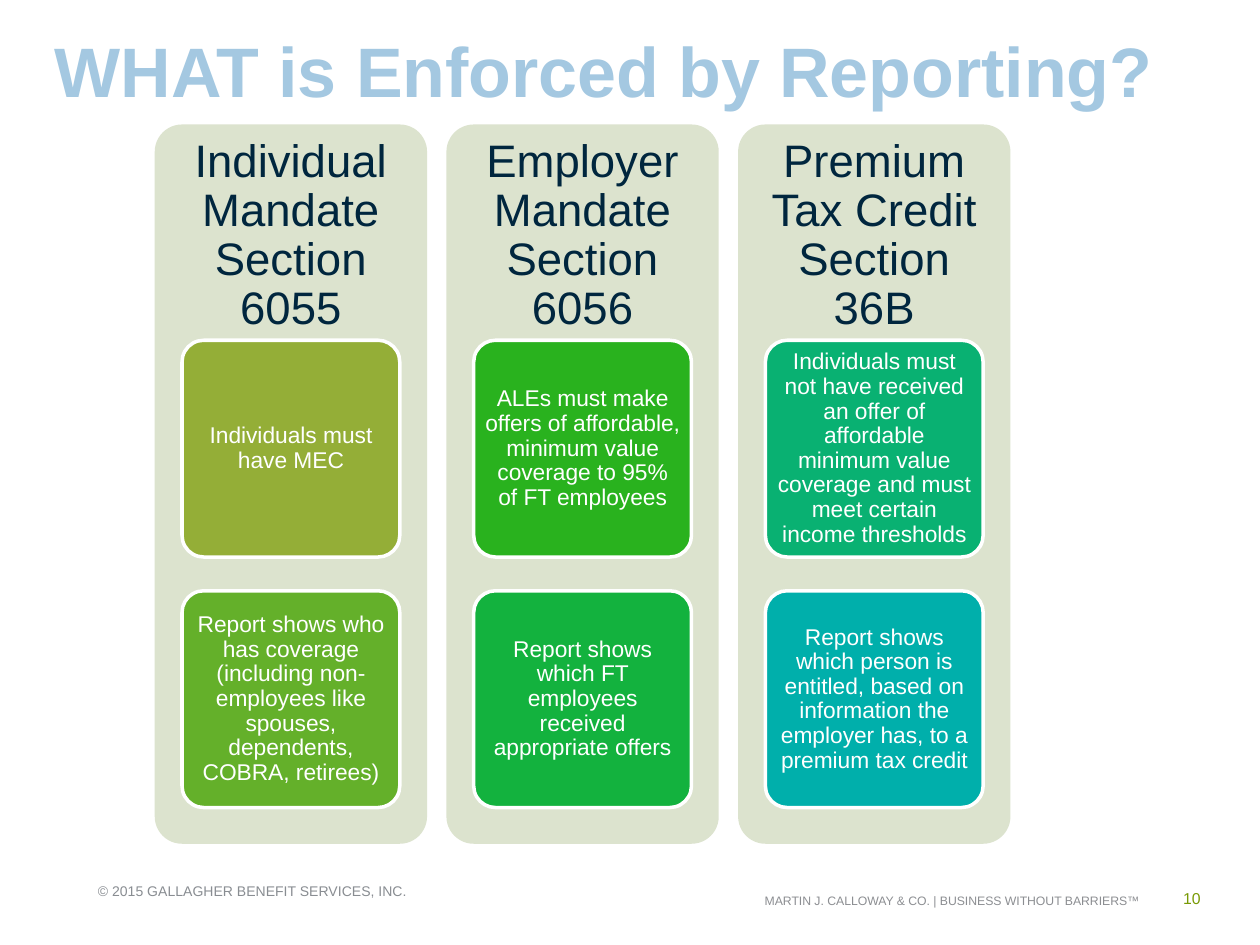
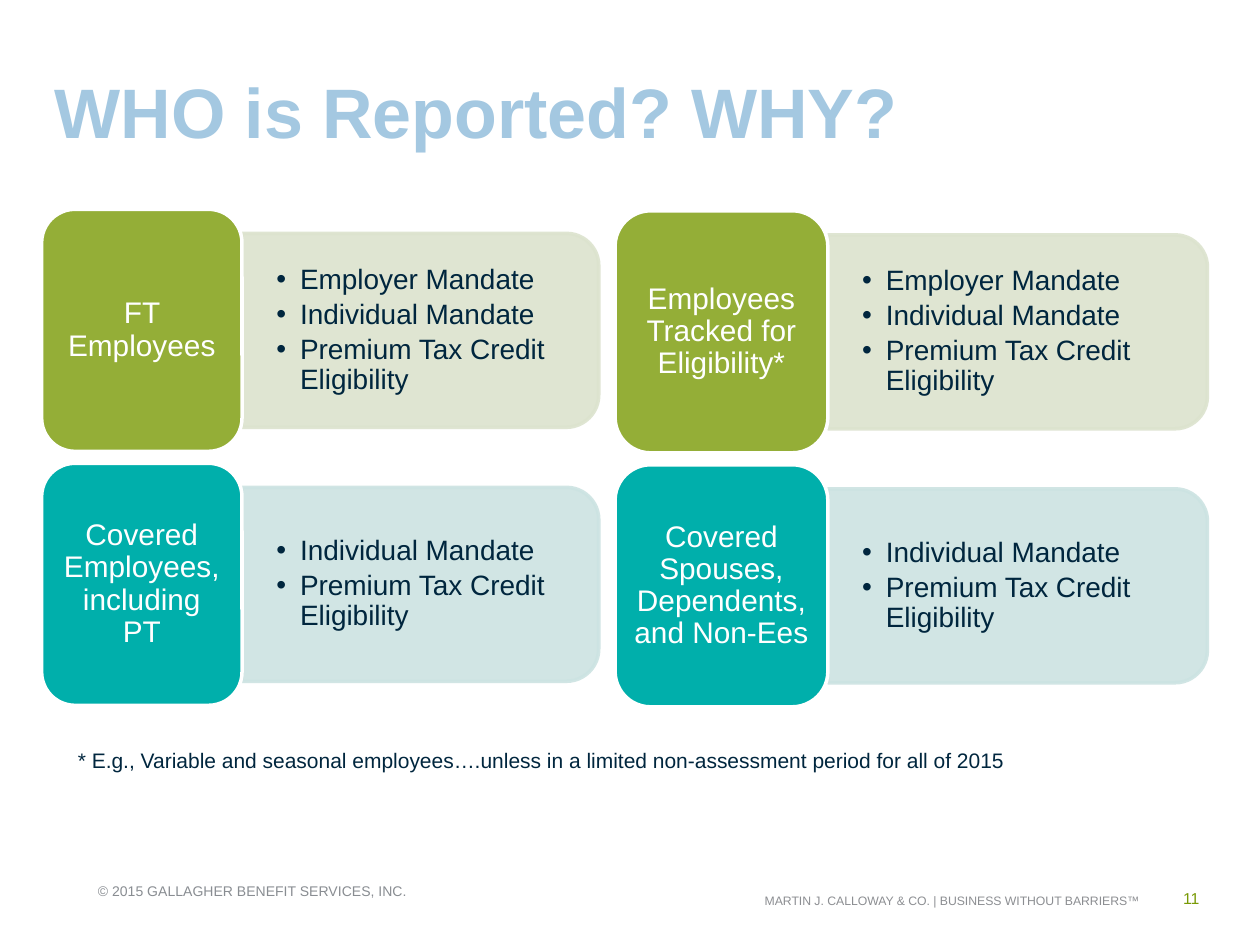
"""Build two slides on what health coverage reporting enforces and who is reported."""
from lxml.etree import SubElement
from pptx import Presentation
from pptx.dml.color import RGBColor
from pptx.enum.shapes import MSO_SHAPE
from pptx.enum.text import MSO_ANCHOR, MSO_AUTO_SIZE, PP_ALIGN
from pptx.oxml.ns import qn
from pptx.util import Cm, Pt

COLOURS = {
    "title": "A4C8E1", "navy": "00263E", "white": "FFFFFF",
    "tagline": "8C8E92", "copyright": "898D92", "number": "799A05",
    "sage": "DCE3CE", "mist": "CCE3E2", "olive": "94AE37", "teal": "00AFAB",
    "leaf": "64B02A", "green": "29B21E", "emerald": "13B23E", "jade": "09B172",
}
FONT = "Arial"


def write(holder, text, size, colour, bold=False, align=PP_ALIGN.LEFT,
          anchor=MSO_ANCHOR.MIDDLE, margins=(0.25, 0.13), spacing=None,
          after=0, bullet=False):
    frame = holder.text_frame
    frame.word_wrap = True
    frame.auto_size = MSO_AUTO_SIZE.NONE
    frame.vertical_anchor = anchor
    frame.margin_left = frame.margin_right = Cm(margins[0])
    frame.margin_top = frame.margin_bottom = Cm(margins[1])
    frame.text = text
    for paragraph in frame.paragraphs:
        paragraph.alignment = align
        paragraph.line_spacing = spacing
        paragraph.space_after = Pt(after)
        if bullet:
            properties = paragraph._p.get_or_add_pPr()
            properties.set("marL", str(Cm(0.48)))
            properties.set("indent", str(-Cm(0.48)))
            SubElement(properties, qn("a:buFont")).set("typeface", FONT)
            SubElement(properties, qn("a:buChar")).set("char", "•")
        for run in paragraph.runs:
            run.font.name = FONT
            run.font.size = Pt(size)
            run.font.bold = bold
            run.font.color.rgb = RGBColor.from_string(COLOURS[colour])


def draw(slide, preset, left, top, width, height, fill, line=None):
    shape = slide.shapes.add_shape(preset, Cm(left), Cm(top), Cm(width), Cm(height))
    shape.shadow.inherit = False
    shape.fill.solid()
    shape.fill.fore_color.rgb = RGBColor.from_string(COLOURS[fill])
    if line:
        shape.line.color.rgb = RGBColor.from_string(COLOURS[line])
        shape.line.width = Pt(2)
    else:
        shape.line.fill.background()
    return shape


deck = Presentation()
deck.slide_width, deck.slide_height = Cm(25.4), Cm(19.05)

slides = []
headlines = [("WHAT is Enforced by Reporting?", 0.43), ("WHO is Reported? WHY?", 1.25)]
for number, (headline, top) in enumerate(headlines, start=10):
    slide = deck.slides.add_slide(deck.slide_layouts[5])
    slides.append(slide)
    title = slide.shapes.title
    title.left, title.top, title.width, title.height = Cm(0.85), Cm(top), Cm(23.06), Cm(1.96)
    write(title, headline, 40, "title", bold=True, anchor=MSO_ANCHOR.TOP)
    footers = [
        ("MARTIN J. CALLOWAY & CO. | BUSINESS WITHOUT BARRIERS™",
         (12.78, 17.65, 10.44, 1.02), 7, "tagline", PP_ALIGN.RIGHT),
        ("© 2015 GALLAGHER BENEFIT SERVICES, INC.",
         (0.64, 17.45, 7.82, 1.02), 8, "copyright", PP_ALIGN.RIGHT),
        (str(number), (23.6, 17.78, 1.19, 0.64), 9, "number", PP_ALIGN.LEFT),
    ]
    for text, place, size, colour, align in footers:
        footer = slide.shapes.add_textbox(*map(Cm, place))
        write(footer, text, size, colour, align=align)

enforcement, reported = slides

mandates = [
    ("Individual Mandate Section 6055", [
        ("Individuals must have MEC", "olive"),
        ("Report shows who has coverage (including non-employees like spouses, "
         "dependents, COBRA, retirees)", "leaf")]),
    ("Employer Mandate Section 6056", [
        ("ALEs must make offers of affordable, minimum value coverage to 95% of "
         "FT employees", "green"),
        ("Report shows which FT employees received appropriate offers", "emerald")]),
    ("Premium Tax Credit Section 36B", [
        ("Individuals must not have received an offer of affordable minimum value "
         "coverage and must meet certain income thresholds", "jade"),
        ("Report shows which person is entitled, based on information the employer "
         "has, to a premium tax credit", "teal")]),
]
for column, (mandate, rules) in enumerate(mandates):
    left = 3.12 + column * 5.88
    panel = draw(enforcement, MSO_SHAPE.ROUNDED_RECTANGLE, left, 2.51, 5.49, 14.5, "sage")
    panel.adjustments[0] = 0.1
    write(panel, mandate, 26, "navy", align=PP_ALIGN.CENTER, anchor=MSO_ANCHOR.TOP,
          margins=(0.12, 0.12), spacing=0.9)
    for row, (rule, fill) in enumerate(rules):
        card = draw(enforcement, MSO_SHAPE.ROUNDED_RECTANGLE, left + 0.55,
                    6.86 + row * 5.05, 4.39, 4.37, fill, "white")
        card.adjustments[0] = 0.1
        write(card, rule, 13, "white", align=PP_ALIGN.CENTER,
              margins=(0.1, 0.08), spacing=0.9)

row_colours = [("olive", "sage"), ("teal", "mist")]
individual_reasons = ["Individual Mandate", "Premium Tax Credit Eligibility"]
row_reasons = [["Employer Mandate"] + individual_reasons, individual_reasons]
group_height, reason_height = 4.88, 3.91
people = [
    (0.84, 4.22, 4.04, 7.19, ["FT Employees", "Covered Employees, including PT"]),
    (12.4, 4.25, 4.29, 7.65, ["Employees Tracked for Eligibility*",
                              "Covered Spouses, Dependents, and Non-Ees"]),
]
for left, first_top, group_width, reason_width, groups in people:
    for row, group in enumerate(groups):
        strong, pale = row_colours[row]
        top = first_top + row * 5.12
        middle = top + group_height / 2
        reason_left = left + group_width
        backing = draw(reported, MSO_SHAPE.ROUND_2_SAME_RECTANGLE,
                       reason_left + (reason_width - reason_height) / 2,
                       middle - reason_width / 2, reason_height, reason_width, pale, pale)
        backing.rotation = 90
        for tint in backing.element.iter(qn("a:srgbClr")):
            SubElement(tint, qn("a:alpha")).set("val", "90000")
        reasons = reported.shapes.add_textbox(
            Cm(reason_left), Cm(middle - 1.77), Cm(reason_width - 0.19), Cm(3.54))
        write(reasons, "\n".join(row_reasons[row]), 16, "navy", margins=(0.69, 0.36),
              spacing=0.9, after=2.7, bullet=True)
        label = draw(reported, MSO_SHAPE.ROUNDED_RECTANGLE, left, top,
                     group_width, group_height, strong, "white")
        write(label, group, 17, "white", align=PP_ALIGN.CENTER,
              margins=(0.18, 0.1), spacing=0.9)

footnote = reported.shapes.add_textbox(Cm(1.32), Cm(14.94), Cm(22.3), Cm(0.76))
write(footnote, "* E.g., Variable and seasonal employees….unless in a limited "
      "non-assessment period for all of 2015", 12, "navy", anchor=MSO_ANCHOR.TOP)

deck.save("out.pptx")
